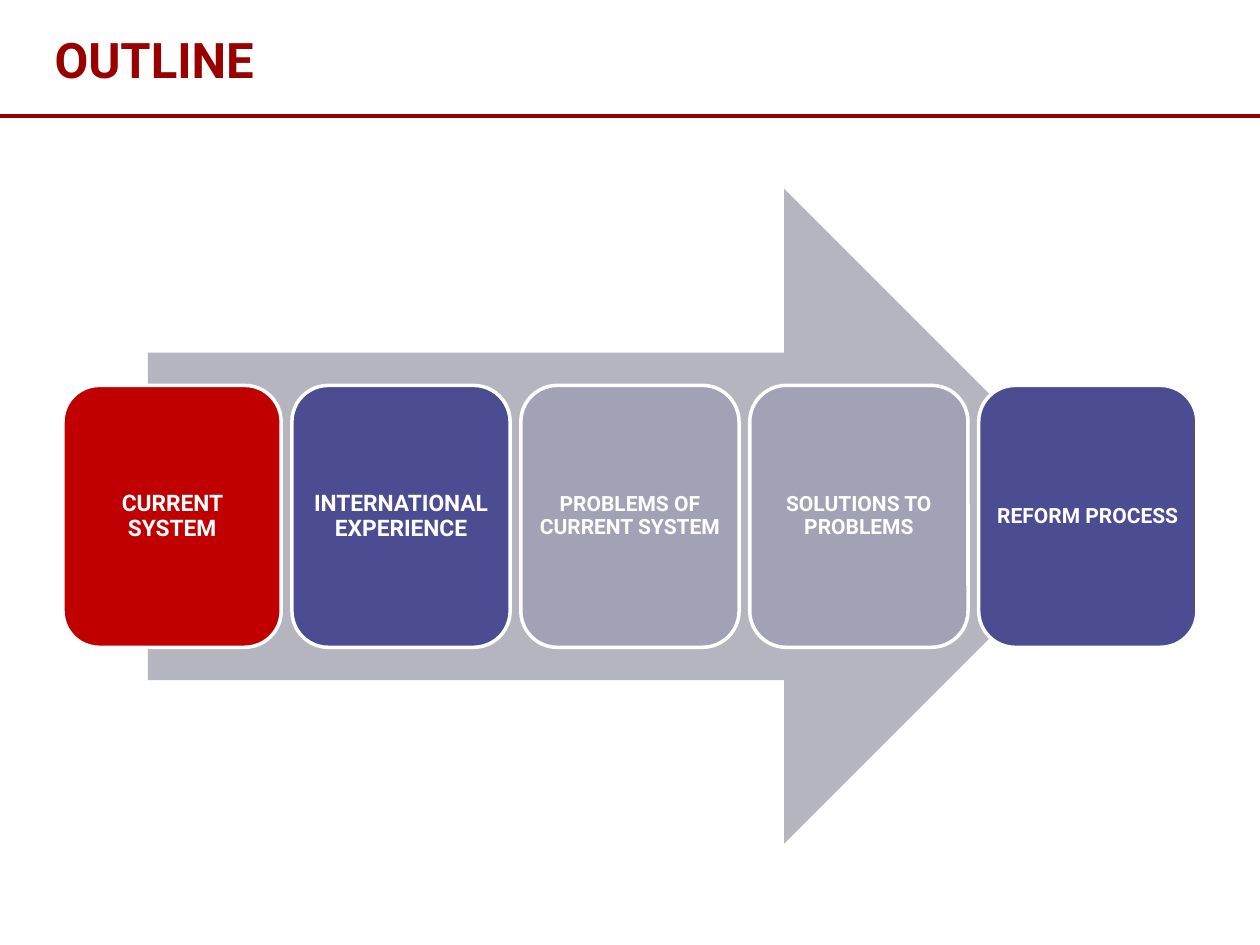
from dataclasses import dataclass

from lxml.etree import SubElement
from pptx import Presentation
from pptx.dml.color import RGBColor
from pptx.enum.shapes import MSO_CONNECTOR, MSO_SHAPE
from pptx.enum.text import MSO_ANCHOR, PP_ALIGN
from pptx.oxml.ns import qn
from pptx.shapes.autoshape import Shape
from pptx.slide import Slide
from pptx.util import Cm, Pt


@dataclass(frozen=True)
class Theme:
    font: str = "Roboto"
    title: RGBColor = RGBColor(0x99, 0x00, 0x00)
    arrow: RGBColor = RGBColor(0xB5, 0xB5, 0xBF)
    current: RGBColor = RGBColor(0xC0, 0x00, 0x00)
    strong: RGBColor = RGBColor(0x4C, 0x4C, 0x93)
    muted: RGBColor = RGBColor(0xA2, 0xA2, 0xB7)
    white: RGBColor = RGBColor(0xFF, 0xFF, 0xFF)
    title_size: float = 28
    large_size: float = 13
    small_size: float = 12
    rule_width: float = 2.25
    border_width: float = 2


@dataclass(frozen=True)
class Step:
    label: str
    fill: RGBColor
    size: float


THEME = Theme()
PAGE_WIDTH, PAGE_HEIGHT = 25.4, 19.05
MARGIN = 1.27
STEP_TOP, STEP_WIDTH, STEP_HEIGHT = 7.77, 4.4, 5.28

STEPS = [
    Step("CURRENT SYSTEM", THEME.current, THEME.large_size),
    Step("INTERNATIONAL EXPERIENCE", THEME.strong, THEME.large_size),
    Step("PROBLEMS OF CURRENT SYSTEM", THEME.muted, THEME.small_size),
    Step("SOLUTIONS TO PROBLEMS", THEME.muted, THEME.small_size),
    Step("REFORM PROCESS", THEME.strong, THEME.small_size),
]


def apply_format(target: object, values: dict) -> None:
    for name, value in values.items():
        setattr(target, name, value)


def write_text(box: Shape, text: str, size: float, color: RGBColor,
               frame_format: dict, para_format: dict) -> None:
    frame = box.text_frame
    apply_format(frame, {"word_wrap": True, **frame_format})
    para = frame.paragraphs[0]
    apply_format(para, para_format)
    span = para.add_run()
    span.text = text
    apply_format(span.font, {"name": THEME.font, "size": Pt(size), "bold": True})
    span.font.color.rgb = color


def draw_header(page: Slide, title: str) -> None:
    rule = page.shapes.add_connector(
        MSO_CONNECTOR.STRAIGHT, Cm(0), Cm(2.33), Cm(PAGE_WIDTH), Cm(2.33))
    rule.line.color.rgb = THEME.title
    rule.line.width = Pt(THEME.rule_width)
    SubElement(rule.element.spPr, qn("a:effectLst"))

    box = page.shapes.add_textbox(Cm(0.85), Cm(0), Cm(23.7), Cm(1.9))
    write_text(box, title, THEME.title_size, THEME.title,
               {"vertical_anchor": MSO_ANCHOR.BOTTOM},
               {"alignment": PP_ALIGN.LEFT})


def draw_arrow(page: Slide) -> None:
    arrow = page.shapes.add_shape(
        MSO_SHAPE.RIGHT_ARROW, Cm(2.98), Cm(3.81), Cm(19.43), Cm(13.2))
    arrow.shadow.inherit = False
    arrow.fill.solid()
    arrow.fill.fore_color.rgb = THEME.arrow
    arrow.line.fill.background()


def draw_step(page: Slide, step: Step, left: float) -> None:
    card = page.shapes.add_shape(
        MSO_SHAPE.ROUNDED_RECTANGLE,
        Cm(left), Cm(STEP_TOP), Cm(STEP_WIDTH), Cm(STEP_HEIGHT))
    card.shadow.inherit = False
    card.fill.solid()
    card.fill.fore_color.rgb = step.fill
    card.line.color.rgb = THEME.white
    card.line.width = Pt(THEME.border_width)
    sides = ("left", "top", "right", "bottom")
    insets = {f"margin_{side}": Cm(0.13) for side in sides}
    write_text(card, step.label, step.size, THEME.white,
               {"vertical_anchor": MSO_ANCHOR.MIDDLE, **insets},
               {"alignment": PP_ALIGN.CENTER, "line_spacing": 0.9})


def main() -> None:
    deck = Presentation()
    apply_format(deck, {"slide_width": Cm(PAGE_WIDTH),
                        "slide_height": Cm(PAGE_HEIGHT)})
    page = deck.slides.add_slide(deck.slide_layouts[6])

    # Title and rule
    draw_header(page, "OUTLINE")

    # Process arrow with evenly spread steps in front
    draw_arrow(page)
    pitch = (PAGE_WIDTH - 2 * MARGIN - STEP_WIDTH) / (len(STEPS) - 1)
    for index, step in enumerate(STEPS):
        draw_step(page, step, MARGIN + index * pitch)

    deck.save("out.pptx")


if __name__ == "__main__":
    main()
